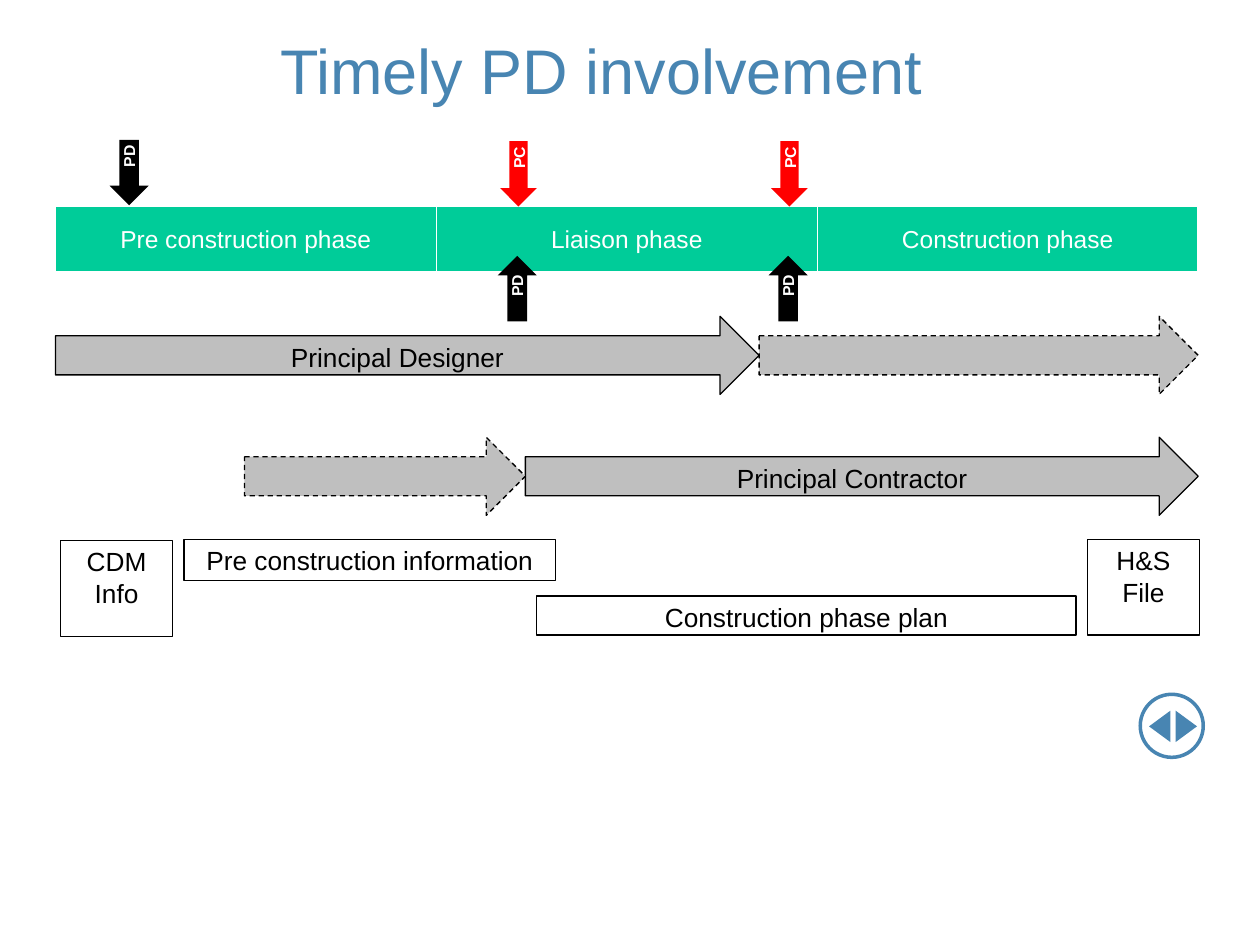
import pptx
import pptx.util
import pptx.dml.color
import pptx.enum.dml
import pptx.enum.shapes
import pptx.enum.text
import pptx.oxml
import pptx.oxml.ns

KIND = pptx.enum.shapes.MSO_SHAPE
ANCHOR = pptx.enum.text.MSO_ANCHOR
ALIGN = pptx.enum.text.PP_ALIGN
DASH = pptx.enum.dml.MSO_LINE.DASH
WIDE, HIGH = pptx.util.Inches(10), pptx.util.Inches(7.5)
BLUE, GREEN, GREY = "4885B2", "00CC99", "BFBFBF"
BLACK, WHITE, RED = "000000", "FFFFFF", "FF0000"

# Places are left, top, width, height in percent of the slide.
TITLE = ("Timely PD involvement", (4.8, 3.47, 85.8, 8.67))
PHASES = ["Pre construction phase", "Liaison phase", "Construction phase"]
BAND = (4.4, 21.87, 90.7, 7.07)
EDGES = {"L": 1, "R": 1, "T": 1, "B": 3}
ROLES = [
    ("Principal Designer", 33.47, 4.4, 60.25, None),
    ("", 33.47, 60.25, 95.1, DASH),
    ("Principal Contractor", 46.27, 41.7, 95.1, None),
    ("", 46.27, 19.4, 41.7, DASH),
]
PAPERS = [
    ("Pre construction information", (14.6, 57.07, 29.5, 4.4)),
    ("Construction phase plan", (42.6, 63.07, 42.8, 4.13)),
    ("CDM Info", (4.8, 57.2, 8.9, 10.13)),
    ("H&S File", (86.3, 57.07, 8.9, 10.13)),
]
DOWN = {"turn": 0, "vert": "vert270", "pad": (0, 0, 0, 0.18)}
UP = {"turn": 180, "vert": "vert", "pad": (0, 0.12, 0, 0)}
MARKS = [
    ("PC", RED, (39.7, 14.93, 2.9, 6.93), DOWN),
    ("PC", RED, (61.2, 14.93, 2.9, 6.93), DOWN),
    ("PD", BLACK, (8.7, 14.8, 3.1, 6.93), DOWN),
    ("PD", BLACK, (39.5, 27.07, 3.1, 6.93), UP),
    ("PD", BLACK, (61, 27.07, 3.1, 6.93), UP),
]
RING = (90.5, 73.47, 5, 6.67)
TIPS = [(92.9, 90), (90.8, 270)]
PAD = (0.07, 0.04, 0.07, 0.04)


def paint(hue):
    return pptx.dml.color.RGBColor.from_string(hue)


def place(spot):
    sides = (WIDE, HIGH, WIDE, HIGH)
    return [round(part * side / 100) for part, side in zip(spot, sides)]


def apply(thing, form):
    for name, value in form.items():
        setattr(thing, name, value)


def pads(inset):
    names = ("left", "top", "right", "bottom")
    return {f"margin_{n}": pptx.util.Inches(v) for n, v in zip(names, inset)}


def write(frame, text, size, hue, bold=False):
    para = frame.paragraphs[0]
    para.alignment = ALIGN.CENTER
    run = para.add_run()
    run.text = text
    apply(run.font, {"name": "Arial", "size": pptx.util.Pt(size), "bold": bold})
    run.font.color.rgb = paint(hue)


def draw(slide, kind, spot, fill, edge=None, width=0.75, dash=None, turn=0):
    shape = slide.shapes.add_shape(kind, *place(spot))
    shape.shadow.inherit = False
    shape.rotation = turn
    shape.fill.solid()
    shape.fill.fore_color.rgb = paint(fill)
    if edge:
        shape.line.color.rgb = paint(edge)
        apply(shape.line, {"width": pptx.util.Pt(width), "dash_style": dash})
    else:
        shape.line.fill.background()
    return shape


def label(shape, text, size=15, hue=BLACK, bold=False, pad=PAD, vert="horz"):
    frame = shape.text_frame
    apply(frame, {"word_wrap": True, "vertical_anchor": ANCHOR.TOP, **pads(pad)})
    frame._txBody.bodyPr.set("vert", vert)
    write(frame, text, size, hue, bold)


def head(slide):
    text, spot = TITLE
    title = slide.shapes.title
    apply(title, dict(zip(("left", "top", "width", "height"), place(spot))))
    apply(title.text_frame, {"word_wrap": True, "vertical_anchor": ANCHOR.MIDDLE,
                             "auto_size": pptx.enum.text.MSO_AUTO_SIZE.NONE})
    write(title.text_frame, text, 36, BLUE)
    title.text_frame.paragraphs[0].line_spacing = 0.9


def rule(cell):
    props = cell._tc.get_or_add_tcPr()
    for side, width in EDGES.items():
        props.append(pptx.oxml.parse_xml(
            f'<a:ln{side} {pptx.oxml.ns.nsdecls("a")} w="{pptx.util.Pt(width)}">'
            f'<a:solidFill><a:srgbClr val="{WHITE}"/></a:solidFill></a:ln{side}>'))


def phases(slide):
    table = slide.shapes.add_table(1, len(PHASES), *place(BAND)).table
    apply(table, {"first_row": False, "horz_banding": False})
    for col, text in enumerate(PHASES):
        cell = table.cell(0, col)
        apply(cell, {"vertical_anchor": ANCHOR.MIDDLE, **pads(PAD)})
        rule(cell)
        cell.fill.solid()
        cell.fill.fore_color.rgb = paint(GREEN)
        write(cell.text_frame, text, 14, WHITE)


def main():
    """Build the slide on timely PD involvement."""
    deck = pptx.Presentation()
    apply(deck, {"slide_width": WIDE, "slide_height": HIGH})
    slide = deck.slides.add_slide(deck.slide_layouts[5])
    head(slide)
    draw(slide, KIND.OVAL, RING, WHITE, BLUE, 2)
    for left, turn in TIPS:
        draw(slide, KIND.FLOWCHART_EXTRACT, (left, 75.73, 2.5, 2.27), BLUE, turn=turn)
    phases(slide)
    for text, top, start, end, dash in ROLES:
        spot = (start, top, end - start, 8.27)
        arrow = draw(slide, KIND.RIGHT_ARROW, spot, GREY, BLACK, dash=dash)
        if text:
            label(arrow, text)
    for text, spot in PAPERS:
        label(draw(slide, KIND.RECTANGLE, spot, WHITE, BLACK), text)
    for text, hue, spot, way in MARKS:
        mark = draw(slide, KIND.DOWN_ARROW, spot, hue, turn=way["turn"])
        label(mark, text, 9, WHITE, True, way["pad"], way["vert"])
    deck.save("out.pptx")


if __name__ == "__main__":
    main()
